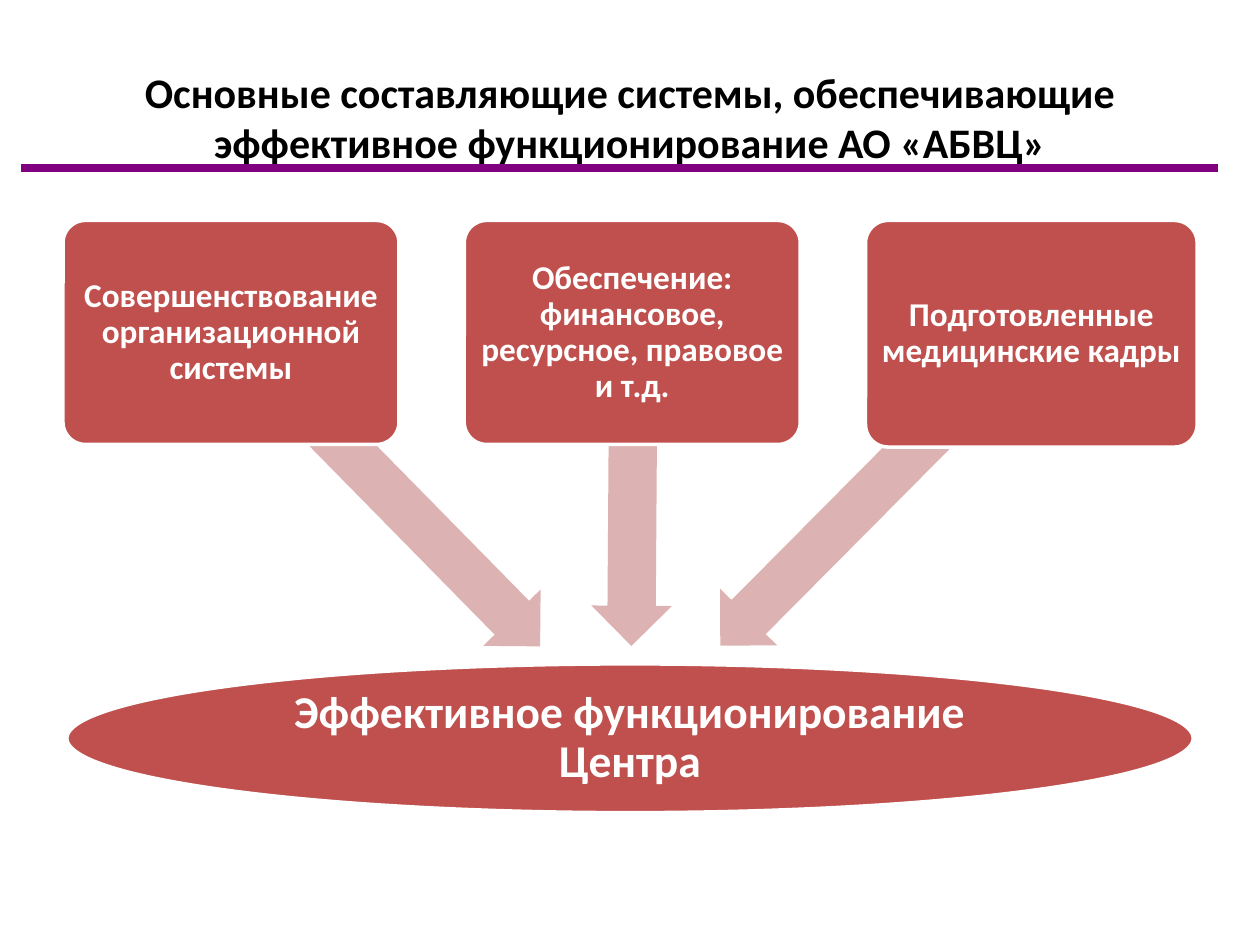
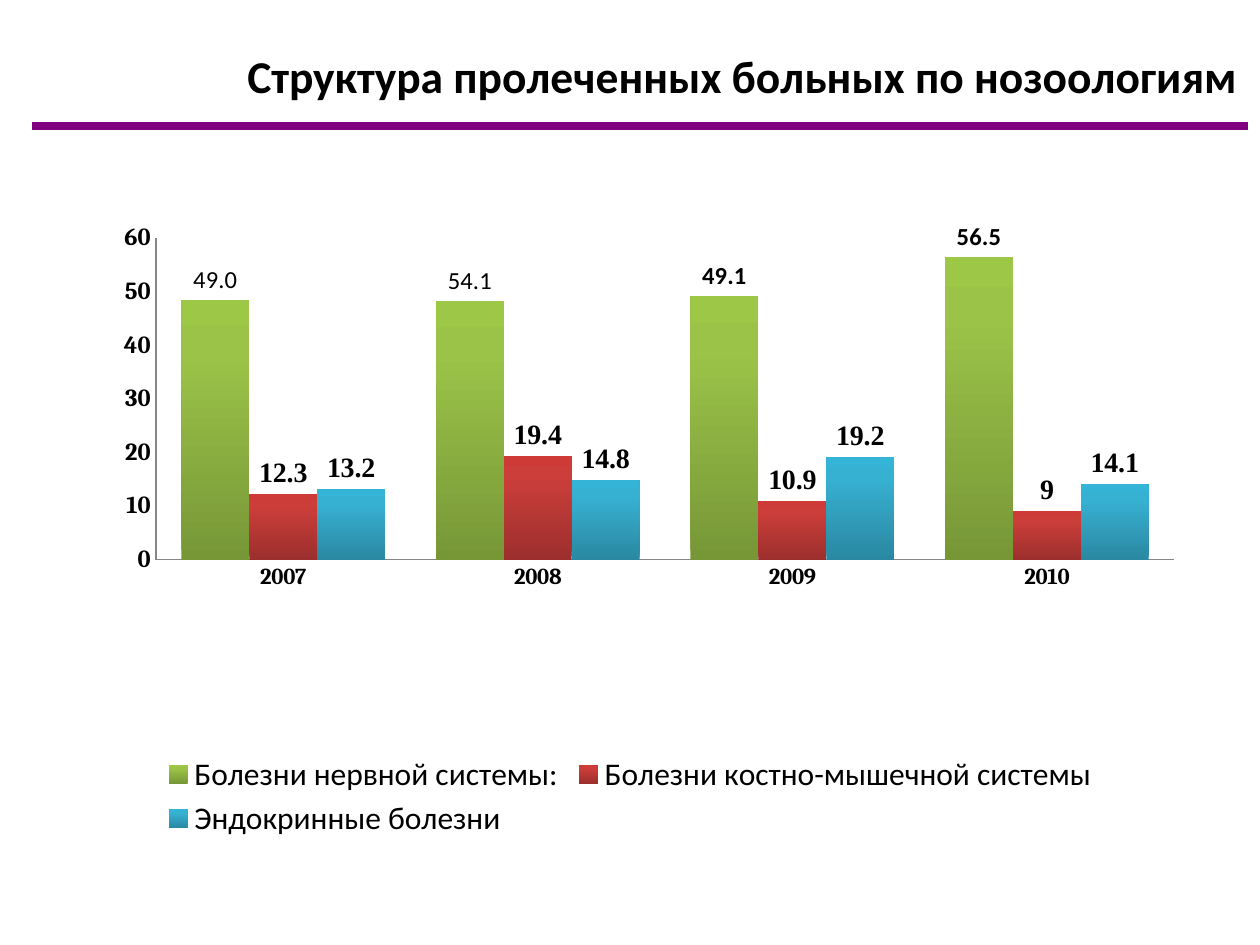
from copy import deepcopy
from dataclasses import dataclass

from lxml.etree import SubElement
from pptx import Presentation
from pptx.chart.data import CategoryChartData
from pptx.dml.color import RGBColor
from pptx.enum.chart import XL_CHART_TYPE, XL_LABEL_POSITION, XL_LEGEND_POSITION, XL_TICK_MARK
from pptx.enum.shapes import MSO_CONNECTOR, MSO_SHAPE
from pptx.enum.text import MSO_ANCHOR, MSO_AUTO_SIZE, PP_ALIGN
from pptx.oxml.ns import qn
from pptx.util import Pt


@dataclass(frozen=True)
class Theme:
    font: str = "Calibri"
    axis_font: str = "Cambria"
    label_font: str = "Times New Roman"
    black: str = "000000"
    white: str = "FFFFFF"
    rule: str = "800080"
    box: str = "C0504D"
    arrow: str = "DCB3B2"
    axis: str = "868686"
    system_title: int = 24
    chart_title: int = 26
    factor: int = 19
    outcome: int = 26
    legend: int = 18
    value_axis: int = 14
    category_axis: int = 13
    nerve_label: int = 14
    label: int = 16


T = Theme()

SYSTEM_TITLE = "Основные составляющие системы, обеспечивающие эффективное функционирование АО «АБВЦ»"
FACTORS = [
    ("Совершенствование организационной системы", 192, 128),
    ("Обеспечение: финансовое, ресурсное, правовое и т.д.", 192, 128),
    ("Подготовленные медицинские кадры", 189.5, 129.5),
]
ARROWS = [(220.3, 252, 225.5), (361.4, 179.3, 270.4), (500.4, 252, 314.8)]
OUTCOME = "Эффективное функционирование Центра"

CHART_TITLE = "Структура пролеченных больных по нозоологиям"
YEARS = ["2007", "2008", "2009", "2010"]
DISEASES = [
    ("Болезни нервной системы:", (48.5, 48.2, 49.1, 56.5),
     ("779737", "9BC348", "9DC746"), T.font, T.nerve_label),
    ("Болезни костно-мышечной системы", (12.3, 19.4, 10.9, 9),
     ("9C2F2D", "CB3E3A", "CE3B37"), T.label_font, T.label),
    ("Эндокринные болезни", (13.2, 14.8, 19.2, 14.1),
     ("2A88A2", "37B1D2", "34B4D6"), T.label_font, T.label),
]
GRADIENT_STOPS = (0, 0.8, 1)
NERVE_LABELS = ["49.0", "54.1"]
PLOT_AREA = {"x": 0.082, "y": 0.028, "w": 0.898, "h": 0.516}


def rgb(value):
    return RGBColor.from_string(value)


def set_font(font, size, color=T.black, name=T.font, bold=True):
    font.name, font.size, font.bold = name, Pt(size), bold
    font.color.rgb = rgb(color)


def write(tf, text, size, color, align=PP_ALIGN.CENTER):
    tf.word_wrap = True
    tf.auto_size = MSO_AUTO_SIZE.NONE
    tf.vertical_anchor = MSO_ANCHOR.MIDDLE
    p = tf.paragraphs[0]
    p.alignment = align
    r = p.add_run()
    r.text = text
    set_font(r.font, size, color)
    return p


def titled_slide(prs, title, size, box, align, rule):
    s = prs.slides.add_slide(prs.slide_layouts[5])
    sp = s.shapes.title
    sp.left, sp.top, sp.width, sp.height = map(Pt, box)
    write(sp.text_frame, title, size, T.black, align)
    left, right, y = rule

    def draw_rule():
        line = s.shapes.add_connector(MSO_CONNECTOR.STRAIGHT, Pt(left), Pt(y), Pt(right), Pt(y))
        line.line.color.rgb = rgb(T.rule)
        line.line.width = Pt(4.5)
        SubElement(line._element.spPr, qn("a:effectLst"))

    return s, draw_rule


def add_block(s, kind, box, fill, outlined=True):
    sp = s.shapes.add_shape(kind, *map(Pt, box))
    sp.shadow.inherit = False
    sp.fill.solid()
    sp.fill.fore_color.rgb = rgb(fill)
    if outlined:
        sp.line.color.rgb = rgb(T.white)
        sp.line.width = Pt(2)
    else:
        sp.line.fill.background()
    return sp


def label_block(sp, text, size, inset):
    tf = sp.text_frame
    tf.margin_left = tf.margin_right = tf.margin_top = tf.margin_bottom = Pt(inset)
    write(tf, text, size, T.white).line_spacing = 0.9


def build_system(prs):
    s, draw_rule = titled_slide(prs, SYSTEM_TITLE, T.system_title, (36, 21.6, 648, 90),
                                PP_ALIGN.CENTER, (12, 696, 96))
    sp = add_block(s, MSO_SHAPE.OVAL, (38.2, 379.4, 643.6, 85), T.box)
    label_block(sp, OUTCOME, T.outcome, 1.5)
    for center, length, angle in ARROWS:
        sp = add_block(s, MSO_SHAPE.LEFT_ARROW, (center - length / 2, 256.5, length, 46),
                       T.arrow, outlined=False)
        sp.adjustments[0], sp.adjustments[1] = 0.6, 0.5
        sp.rotation = angle
    for i, (text, width, height) in enumerate(FACTORS):
        sp = add_block(s, MSO_SHAPE.ROUNDED_RECTANGLE, (36 + 229.3 * i, 126, width, height), T.box)
        sp.adjustments[0] = 0.1
        label_block(sp, text, T.factor, 3)
    draw_rule()


def place_plot(chart):
    area = chart._chartSpace.chart.plotArea
    layout = area.find(qn("c:layout"))
    if layout is None:
        layout = area.makeelement(qn("c:layout"))
        area.insert(0, layout)
    manual = SubElement(layout, qn("c:manualLayout"))
    settings = {"layoutTarget": "inner", "xMode": "edge", "yMode": "edge", **PLOT_AREA}
    for key, value in settings.items():
        SubElement(manual, qn(f"c:{key}")).set("val", str(value))


def format_axis(axis, size):
    axis.has_major_gridlines = False
    axis.major_tick_mark = axis.minor_tick_mark = XL_TICK_MARK.NONE
    axis.format.line.color.rgb = rgb(T.axis)
    set_font(axis.tick_labels.font, size, name=T.axis_font)


def format_series(ser, colors, font, size):
    fill = ser.format.fill
    fill.gradient()
    fill.gradient_angle = 90
    stops = ser._element.find(".//" + qn("a:gsLst"))
    stops.append(deepcopy(stops[0]))
    for stop, position, color in zip(fill.gradient_stops, GRADIENT_STOPS, colors):
        stop.position = position
        stop.color.rgb = rgb(color)
    labels = ser.data_labels
    labels.show_value = True
    labels.position = XL_LABEL_POSITION.OUTSIDE_END
    set_font(labels.font, size, name=font)


def build_chart(prs):
    s, draw_rule = titled_slide(prs, CHART_TITLE, T.chart_title, (24, 24, 691, 38),
                                PP_ALIGN.RIGHT, (18, 713, 72))
    data = CategoryChartData()
    data.categories = YEARS
    for name, values, *_ in DISEASES:
        data.add_series(name, values)
    chart = s.shapes.add_chart(XL_CHART_TYPE.COLUMN_CLUSTERED, Pt(36), Pt(126),
                               Pt(648), Pt(356.4), data).chart
    set_font(chart.font, T.legend, bold=False)
    chart.has_title = False
    chart.has_legend = True
    chart.legend.position = XL_LEGEND_POSITION.BOTTOM
    chart.legend.include_in_layout = False
    place_plot(chart)
    format_axis(chart.category_axis, T.category_axis)
    format_axis(chart.value_axis, T.value_axis)
    chart.value_axis.minimum_scale, chart.value_axis.maximum_scale = 0, 60
    chart.value_axis.major_unit = 10
    plot = chart.plots[0]
    plot.gap_width, plot.overlap, plot.vary_by_categories = 75, 0, False
    for ser, (_, _, colors, font, size) in zip(plot.series, DISEASES):
        format_series(ser, colors, font, size)
    for i, text in enumerate(NERVE_LABELS):
        label = plot.series[0].points[i].data_label
        r = label.text_frame.paragraphs[0].add_run()
        r.text = text
        set_font(r.font, T.nerve_label, bold=False)
        label.position = XL_LABEL_POSITION.OUTSIDE_END
    draw_rule()


def main():
    prs = Presentation()
    prs.slide_width, prs.slide_height = Pt(720), Pt(540)
    build_system(prs)
    build_chart(prs)
    prs.save("out.pptx")


if __name__ == "__main__":
    main()
